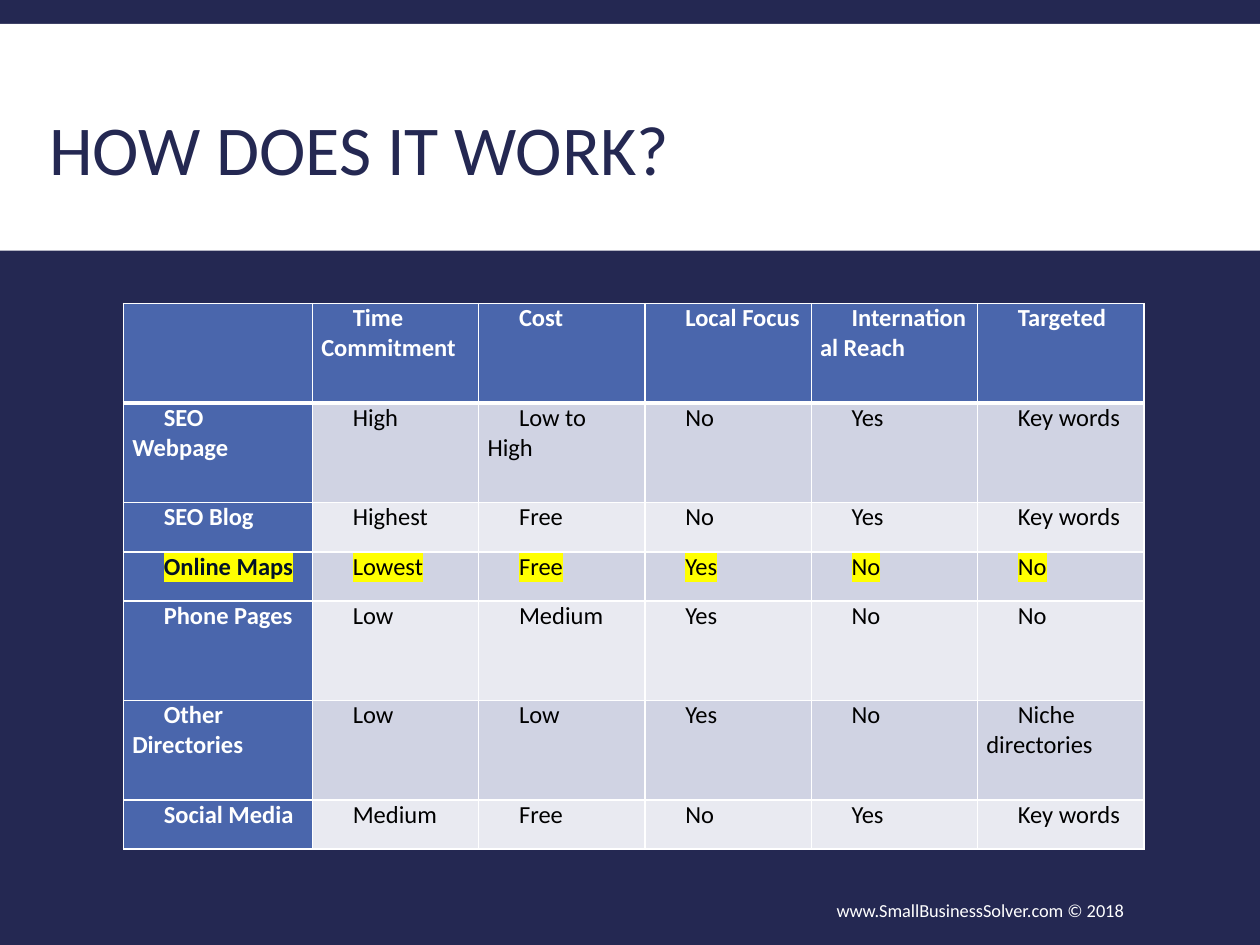
from lxml import etree
from pptx import Presentation
from pptx.dml.color import RGBColor
from pptx.enum.shapes import MSO_SHAPE
from pptx.enum.text import MSO_ANCHOR, PP_ALIGN
from pptx.oxml.ns import qn
from pptx.util import Inches, Pt

RECTANGLE = MSO_SHAPE.RECTANGLE
MIDDLE = MSO_ANCHOR.MIDDLE
LEFT = PP_ALIGN.LEFT
RIGHT = PP_ALIGN.RIGHT

NAVY = RGBColor(0x24, 0x28, 0x52)
BLUE = RGBColor(0x4A, 0x66, 0xAC)
DARK_BAND = RGBColor(0xD0, 0xD3, 0xE3)
LIGHT_BAND = RGBColor(0xE9, 0xEA, 0xF1)
INK = RGBColor(0x03, 0x12, 0x27)
BLACK = RGBColor(0, 0, 0)
WHITE = RGBColor(0xFF, 0xFF, 0xFF)
YELLOW = RGBColor(0xFF, 0xFF, 0)

FONT = "Calibri"
HIGHLIGHTED_ROW = 3
COLUMN_WIDTHS = [1.5] + [1.32] * 5
ROW_HEIGHTS = [0.79, 0.79, 0.39, 0.39, 0.79, 0.79, 0.39]
CHANNELS = [
    ["", "Time Commitment", "Cost", "Local Focus", "International Reach", "Targeted"],
    ["SEO Webpage", "High", "Low to High", "No", "Yes", "Key words"],
    ["SEO Blog", "Highest", "Free", "No", "Yes", "Key words"],
    ["Online Maps", "Lowest", "Free", "Yes", "No", "No"],
    ["Phone Pages", "Low", "Medium", "Yes", "No", "No"],
    ["Other Directories", "Low", "Low", "Yes", "No", "Niche directories"],
    ["Social Media", "Medium", "Free", "No", "Yes", "Key words"],
]


def format_run(run, size, color, bold=False):
    run.font.name = FONT
    run.font.size = Pt(size)
    run.font.bold = bold
    run.font.color.rgb = color


def highlight_run(run):
    fill = run.font._element.find(qn("a:solidFill"))
    highlight = etree.Element(qn("a:highlight"))
    etree.SubElement(highlight, qn("a:srgbClr"), val=str(YELLOW))
    fill.addnext(highlight)


def add_title_band(slide):
    band = slide.shapes.add_shape(RECTANGLE, 0, Inches(0.19), Inches(10), Inches(1.8))
    band.shadow.inherit = False
    band.fill.solid()
    band.fill.fore_color.rgb = WHITE
    band.line.fill.background()
    slide.shapes._spTree.insert(2, band._element)


def set_title(slide, text):
    title = slide.shapes.title
    title.left, title.top = Inches(0.29), Inches(0.6)
    title.width, title.height = Inches(9.22), Inches(1.25)
    title.text_frame.text = text
    title.text_frame.vertical_anchor = MIDDLE
    paragraph = title.text_frame.paragraphs[0]
    paragraph.alignment = LEFT
    paragraph.line_spacing = 0.85
    format_run(paragraph.runs[0], 40, NAVY)


def set_borders(cell, row):
    widths = {"L": 1, "R": 1, "T": 3 if row == 1 else 1, "B": 3 if row == 0 else 1}
    properties = cell._tc.get_or_add_tcPr()
    for side, width in widths.items():
        line = etree.SubElement(properties, qn(f"a:ln{side}"), w=str(Pt(width)))
        fill = etree.SubElement(line, qn("a:solidFill"))
        etree.SubElement(fill, qn("a:srgbClr"), val=str(WHITE))


def fill_cell(cell, text, row, column):
    is_heading = row == 0 or column == 0
    is_highlighted = row == HIGHLIGHTED_ROW
    set_borders(cell, row)
    cell.fill.solid()
    band = DARK_BAND if row % 2 else LIGHT_BAND
    cell.fill.fore_color.rgb = BLUE if is_heading else band
    cell.margin_left = cell.margin_right = Inches(0.07)
    cell.margin_top = cell.margin_bottom = 0
    if not text:
        return
    cell.text_frame.text = text
    paragraph = cell.text_frame.paragraphs[0]
    properties = paragraph._p.get_or_add_pPr()
    properties.set("marL", "0")
    properties.set("indent", str(Inches(0.25)))
    heading_color = INK if is_highlighted else WHITE
    run = paragraph.runs[0]
    format_run(run, 14, heading_color if is_heading else BLACK, is_heading)
    if is_highlighted:
        highlight_run(run)


def add_channel_table(slide):
    table = slide.shapes.add_table(
        len(CHANNELS), len(COLUMN_WIDTHS), Inches(0.98), Inches(2.41),
        Inches(sum(COLUMN_WIDTHS)), Inches(sum(ROW_HEIGHTS)),
    ).table
    table.first_col = True
    for column, width in zip(table.columns, COLUMN_WIDTHS):
        column.width = Inches(width)
    for row, height in zip(table.rows, ROW_HEIGHTS):
        row.height = Inches(height)
    for row, values in enumerate(CHANNELS):
        for column, text in enumerate(values):
            fill_cell(table.cell(row, column), text, row, column)


def add_footer(slide, text):
    footer = slide.shapes.add_textbox(Inches(4.58), Inches(7.02), Inches(4.44), Inches(0.4))
    footer.text_frame.word_wrap = True
    footer.text_frame.vertical_anchor = MIDDLE
    footer.text_frame.text = text
    paragraph = footer.text_frame.paragraphs[0]
    paragraph.alignment = RIGHT
    format_run(paragraph.runs[0], 10.5, WHITE)


def main():
    presentation = Presentation()
    presentation.slide_width = Inches(10)
    presentation.slide_height = Inches(7.5)
    slide = presentation.slides.add_slide(presentation.slide_layouts[5])
    slide.background.fill.solid()
    slide.background.fill.fore_color.rgb = NAVY
    add_title_band(slide)
    set_title(slide, "HOW DOES IT WORK?")
    add_channel_table(slide)
    add_footer(slide, "www.SmallBusinessSolver.com © 2018")
    presentation.save("out.pptx")


if __name__ == "__main__":
    main()
